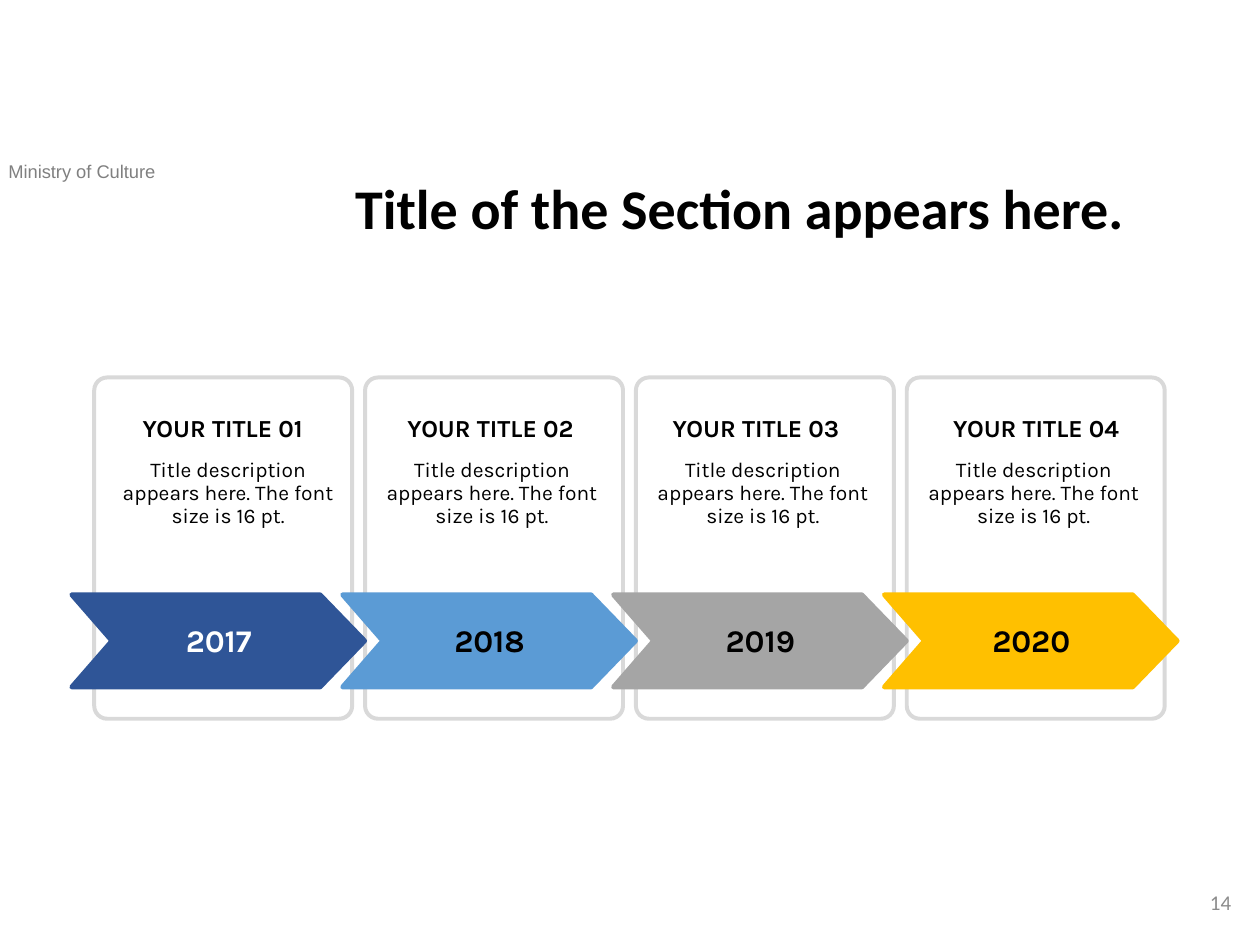
from pptx import Presentation
from pptx import util as u
from pptx.dml.color import RGBColor
from pptx.enum import shapes, text
from pptx.util import Cm, Pt

BLACK = RGBColor(0x00, 0x00, 0x00)
WHITE = RGBColor(0xFF, 0xFF, 0xFF)
HEADER_GRAY = RGBColor(0x80, 0x80, 0x80)
NUMBER_GRAY = RGBColor(0x8C, 0x8C, 0x8C)
FRAME_GRAY = RGBColor(0xD9, 0xD9, 0xD9)
NAVY = RGBColor(0x2F, 0x55, 0x97)
BLUE = RGBColor(0x5B, 0x9B, 0xD5)
GRAY = RGBColor(0xA5, 0xA5, 0xA5)
AMBER = RGBColor(0xFF, 0xC0, 0x00)

CENTER = text.PP_ALIGN.CENTER
TOP, MIDDLE, BOTTOM = (text.MSO_ANCHOR.TOP, text.MSO_ANCHOR.MIDDLE,
                       text.MSO_ANCHOR.BOTTOM)

CARD_W, CARD_H = Cm(5.28), Cm(6.96)
CARD_PITCH = Cm(5.46)
DESCRIPTION = "Title description appears here. The font size is 16 pt."
# year, arrow colour, year colour, heading centre, description centre
STEPS = [
    ("2017", NAVY, WHITE, Cm(2.63), Cm(2.74)),
    ("2018", BLUE, BLACK, Cm(2.57), Cm(2.6)),
    ("2019", GRAY, BLACK, Cm(2.46), Cm(2.6)),
    ("2020", AMBER, BLACK, Cm(2.65), Cm(2.6)),
]


def write(sp, content, size, font, color, bold=False, align=None, anchor=TOP):
    """Fill the text frame of sp with one formatted run; return its paragraph."""
    tf = sp.text_frame
    tf.word_wrap = True
    tf.auto_size = text.MSO_AUTO_SIZE.NONE
    tf.vertical_anchor = anchor
    p = tf.paragraphs[0]
    p.alignment = align
    r = p.add_run()
    r.text = content
    r.font.size = Pt(size)
    r.font.name = font
    r.font.bold = bold
    r.font.color.rgb = color
    return p


def add_frame(s, x, y, w, h):
    line = Cm(0.08)
    sp = s.shapes.add_shape(shapes.MSO_SHAPE.ROUNDED_RECTANGLE,
                            x + line // 2, y + line // 2, w - line, h - line)
    sp.adjustments[0] = 0.05
    sp.shadow.inherit = False
    sp.fill.background()
    sp.line.color.rgb = FRAME_GRAY
    sp.line.width = line


def add_arrow(s, x, y, w, h, color):
    """Notched arrow whose outline, in its own colour, softens the corners."""
    inset = Cm(0.05)
    left, right = x + inset, x + w - inset
    top, bottom, middle = y + inset, y + h - inset, y + h // 2
    shoulder = x + w - Cm(0.95)
    outline = s.shapes.build_freeform(left, top)
    outline.add_line_segments([(shoulder, top), (right, middle),
                               (shoulder, bottom), (left, bottom),
                               (x + Cm(0.86), middle)])
    sp = outline.convert_to_shape()
    sp.shadow.inherit = False
    sp.fill.solid()
    sp.fill.fore_color.rgb = color
    sp.line.color.rgb = color
    sp.line.width = 2 * inset


def add_step_text(s, x, y, number, step):
    year, _, year_color, heading_center, description_center = step
    sp = s.shapes.add_textbox(x + Cm(1.5), y + Cm(4.83), Cm(2.1), Cm(1.02))
    write(sp, year, 18, "Karla", year_color, True, CENTER, MIDDLE)

    w = Cm(4.75)
    sp = s.shapes.add_textbox(x + heading_center - w // 2, y + Cm(0.61),
                              w, Cm(0.86))
    write(sp, f"YOUR TITLE {number:02d}", 14, "Karla", BLACK, True,
          CENTER, BOTTOM)

    w = Cm(4.6)
    sp = s.shapes.add_textbox(x + description_center - w // 2, y + Cm(1.65),
                              w, Cm(1.47))
    tf = sp.text_frame
    tf.margin_left = tf.margin_right = Cm(0.1)
    tf.margin_top = tf.margin_bottom = Cm(0.05)
    p = write(sp, DESCRIPTION, 12, "Karla", BLACK, align=CENTER)
    p.line_spacing = 0.9


def add_timeline(s, x, y):
    lefts = [x + i * CARD_PITCH for i in range(len(STEPS))]
    for left in lefts:
        add_frame(s, left, y, CARD_W, CARD_H)
    for left, step in zip(lefts, STEPS):
        add_arrow(s, left - Cm(0.46), y + Cm(4.37), Cm(6), Cm(1.96), step[1])
    for number, (left, step) in enumerate(zip(lefts, STEPS), 1):
        add_step_text(s, left, y, number, step)


def add_title(s, x, y, w, h):
    sp = s.shapes.title
    sp.left, sp.top, sp.width, sp.height = x, y, w, h
    p = write(sp, "Title of the Section appears here.", 32, "Calibri",
              BLACK, True, CENTER)
    p.line_spacing = 0.9


def add_header(s, x, y, w, h):
    sp = s.shapes.add_textbox(x, y, w, h)
    write(sp, "Ministry of Culture", 10.5, "Arial", HEADER_GRAY)


def add_page_number(s, x, y, w, h):
    sp = s.shapes.add_textbox(x, y, w, h)
    write(sp, "14", 12, "Calibri", NUMBER_GRAY,
          align=text.PP_ALIGN.RIGHT, anchor=MIDDLE)


def main():
    prs = Presentation()
    prs.slide_width, prs.slide_height = u.Cm(25.4), u.Cm(19.05)
    s = prs.slides.add_slide(prs.slide_layouts[5])
    add_header(s, Cm(-0.08), Cm(3.1), Cm(5.54), Cm(0.71))
    add_timeline(s, Cm(1.86), Cm(7.57))
    add_page_number(s, Cm(19.35), Cm(17.68), Cm(5.72), Cm(1.02))
    add_title(s, Cm(6.71), Cm(3.53), Cm(16.41), Cm(2.01))
    prs.save("out.pptx")


if __name__ == "__main__":
    main()
